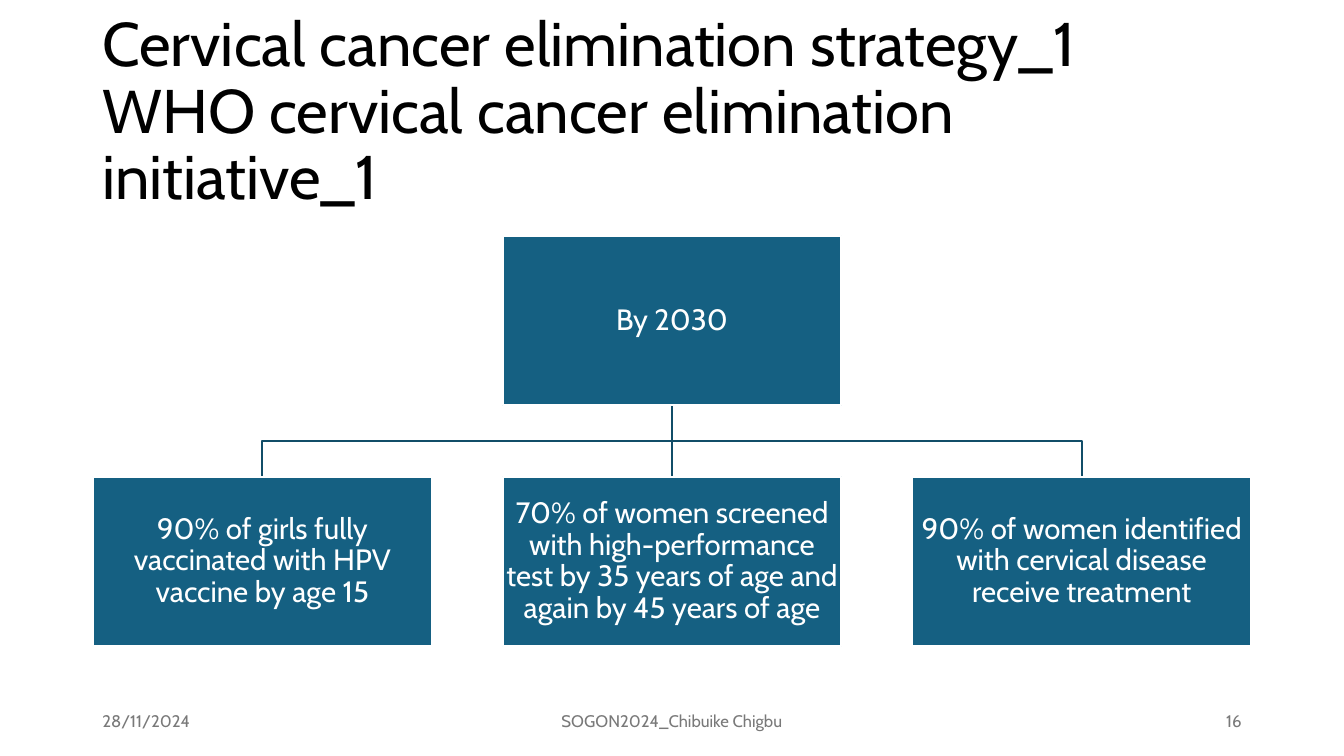
from dataclasses import dataclass

from lxml import etree
from pptx import Presentation
from pptx import util as u
from pptx.dml import color
from pptx.enum import shapes, text
from pptx.oxml import ns

Pt = u.Pt


@dataclass(frozen=True)
class Theme:
    font: str = "Cabin"
    ink: str = "000000"
    white: str = "FFFFFF"
    box: str = "156082"
    branch: str = "114D68"
    muted: str = "797979"
    title_size: int = 44
    box_size: int = 21
    footer_size: int = 12
    line_width: float = 1.5


THEME = Theme()
LEFT, CENTER, MIDDLE, RIGHT = 66, 480, 315, 894
BOX_WIDTH, BOX_HEIGHT, BOX_PITCH = 242, 121, 292.6
PARENT_TOP, CHILD_TOP = 168.5, 340.5
PARENT_BOTTOM = PARENT_TOP + BOX_HEIGHT
GOALS = [
    "90% of girls fully vaccinated with HPV vaccine by age 15",
    "70% of women screened with high-performance test by 35 years of age and again by 45 years of age",
    "90% of women identified with cervical disease receive treatment",
]


def rgb(value):
    return color.RGBColor.from_string(value)


def write_text(frame, words, *, size, ink, align="LEFT", spacing=1.0, inset=None):
    frame.word_wrap = True
    frame.vertical_anchor = text.MSO_ANCHOR.MIDDLE
    if inset is not None:
        frame.margin_left = frame.margin_right = Pt(inset)
        frame.margin_top = frame.margin_bottom = Pt(inset)
    para = frame.paragraphs[0]
    para.alignment = getattr(text.PP_ALIGN, align)
    para.line_spacing = spacing
    para.text = words
    for span in para.runs:
        span.font.name = THEME.font
        span.font.size = Pt(size)
        span.font.color.rgb = rgb(ink)


def add_label(page, words, left, top, width, height, **style):
    label = page.shapes.add_textbox(Pt(left), Pt(top), Pt(width), Pt(height))
    write_text(label.text_frame, words, **style)


def add_box(page, words, center, top):
    box = page.shapes.add_shape(
        shapes.MSO_SHAPE.RECTANGLE,
        Pt(center - BOX_WIDTH / 2), Pt(top), Pt(BOX_WIDTH), Pt(BOX_HEIGHT),
    )
    box.shadow.inherit = False
    box.fill.solid()
    box.fill.fore_color.rgb = rgb(THEME.box)
    style_line(box.line, THEME.white)
    write_text(box.text_frame, words, size=THEME.box_size, ink=THEME.white,
               align="CENTER", spacing=0.9, inset=1)
    return box


def style_line(line, ink):
    line.color.rgb = rgb(ink)
    line.width = Pt(THEME.line_width)


def add_trunk(page):
    trunk = page.shapes.add_connector(
        shapes.MSO_CONNECTOR.STRAIGHT,
        Pt(CENTER), Pt(PARENT_BOTTOM), Pt(CENTER), Pt(CHILD_TOP),
    )
    style_line(trunk.line, THEME.branch)
    etree.SubElement(trunk._element.spPr, ns.qn("a:effectLst"))
    return trunk


def add_branch(page, center):
    builder = page.shapes.build_freeform(Pt(CENTER), Pt(PARENT_BOTTOM))
    corners = [(CENTER, MIDDLE), (center, MIDDLE), (center, CHILD_TOP)]
    builder.add_line_segments([(Pt(x), Pt(y)) for x, y in corners], close=False)
    branch = builder.convert_to_shape()
    branch.shadow.inherit = False
    branch.fill.background()
    style_line(branch.line, THEME.branch)


def add_footer(page, words, left, width, align):
    add_label(page, words, left, 500.5, width, 28.75,
              size=THEME.footer_size, ink=THEME.muted, align=align)


def main():
    deck = Presentation()
    deck.slide_width, deck.slide_height = Pt(960), Pt(540)
    page = deck.slides.add_slide(deck.slide_layouts[6])

    add_label(
        page,
        "Cervical cancer elimination strategy_1\vWHO cervical cancer elimination initiative_1",
        LEFT, 28.75, RIGHT - LEFT, 104.4,
        size=THEME.title_size, ink=THEME.ink, spacing=0.9,
    )

    centers = [CENTER + step * BOX_PITCH for step in (-1, 0, 1)]
    add_branch(page, centers[2])
    trunk = add_trunk(page)
    add_branch(page, centers[0])

    parent = add_box(page, "By 2030", CENTER, PARENT_TOP)
    children = [add_box(page, goal, center, CHILD_TOP)
                for goal, center in zip(GOALS, centers)]
    trunk.begin_connect(parent, 2)
    trunk.end_connect(children[1], 0)

    add_footer(page, "28/11/2024", LEFT, 216, "LEFT")
    add_footer(page, "SOGON2024_Chibuike Chigbu", CENTER - 162, 324, "CENTER")
    add_footer(page, "16", RIGHT - 216, 216, "RIGHT")
    deck.save("out.pptx")


if __name__ == "__main__":
    main()
